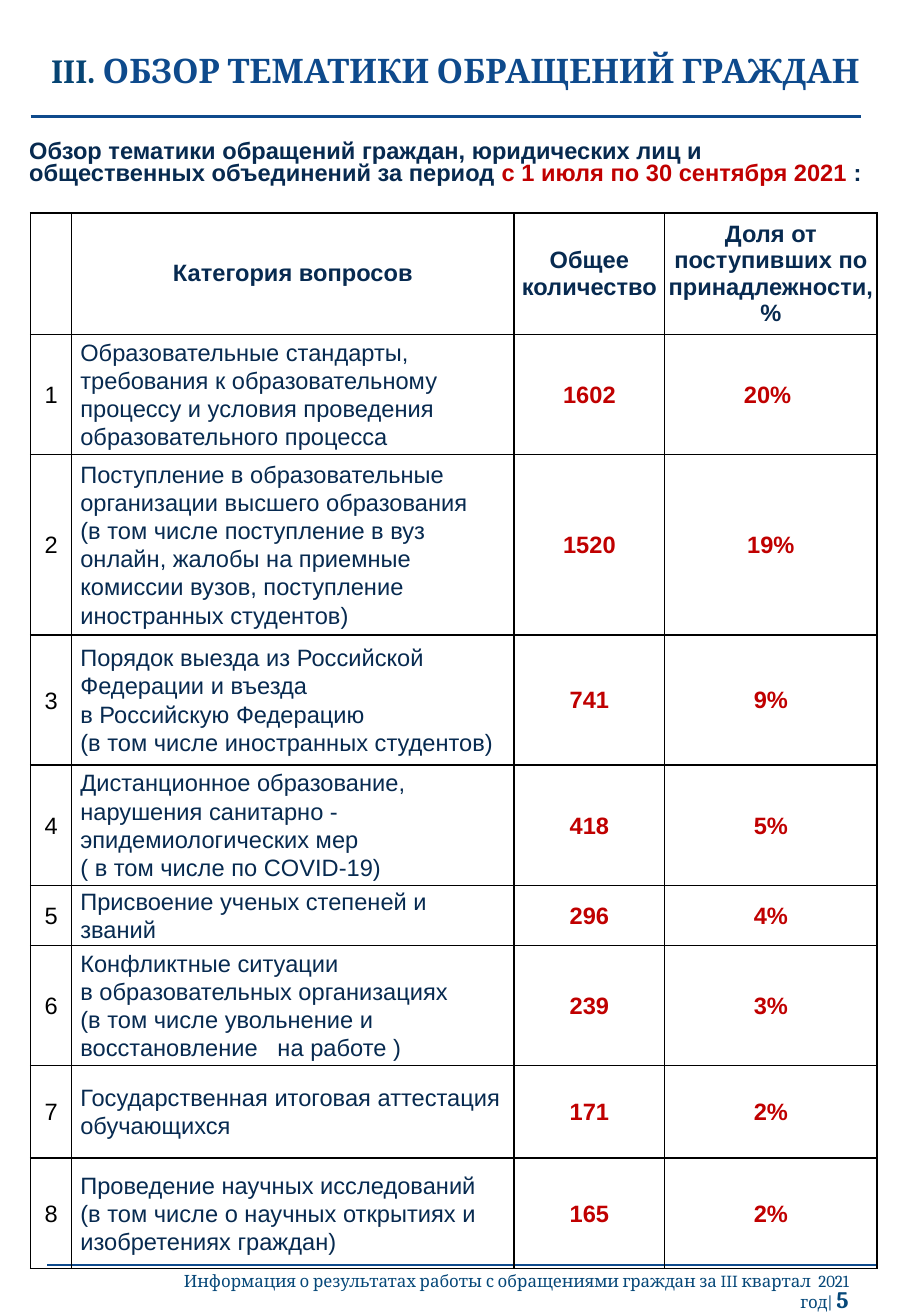
from lxml.etree import SubElement
from pptx import Presentation
from pptx.dml.color import RGBColor
from pptx.enum.shapes import MSO_CONNECTOR as Connector
from pptx.enum.text import MSO_ANCHOR as Anchor, PP_ALIGN as Align
from pptx.oxml.ns import qn
from pptx.util import Cm, Pt

COLORS = {
    "title_number": "064473",
    "title": "0E4A8C",
    "footer": "064879",
    "navy": "072A50",
    "red": "C00000",
    "black": "000000",
}

TITLE = [
    ("III. ", "Cambria", 20, "title_number", True),
    ("ОБЗОР ТЕМАТИКИ ОБРАЩЕНИЙ ГРАЖДАН", "Cambria", 20, "title", True),
]
SUBTITLE = [
    ("Обзор тематики обращений граждан, юридических лиц и общественных объединений за период ",
     "Arial", 14, "navy", True),
    ("с 1 июля по 30 сентября 2021 ", "Arial", 14, "red", True),
    (":", "Arial", 14, "navy", True),
]
FOOTER = [
    ("Информация о результатах работы с обращениями граждан за III квартал  2021 год| ",
     "Cambria", 10, "footer", False),
    ("5", "Cambria", 14, "footer", True),
]
HEADINGS = ["", "Категория вопросов", "Общее количество", "Доля от поступивших по принадлежности, %"]
TOPICS = [
    (["Образовательные стандарты, требования к образовательному процессу "
      "и условия проведения образовательного процесса"], "1602", "20% "),
    (["Поступление в образовательные организации высшего образования",
      "(в том числе поступление в вуз онлайн, жалобы на приемные комиссии вузов, "
      "поступление иностранных студентов)"], "1520", "19%"),
    (["Порядок выезда из Российской Федерации и въезда \nв Российскую Федерацию",
      "(в том числе иностранных студентов)"], "741", "9%"),
    (["Дистанционное образование, нарушения санитарно - эпидемиологических мер \n"
      "( в том числе по COVID-19)"], "418", "5%"),
    (["Присвоение ученых степеней и званий"], "296", "4%"),
    (["Конфликтные ситуации \nв образовательных организациях",
      "(в том числе увольнение и восстановление   на работе )"], "239", "3%"),
    (["Государственная итоговая аттестация обучающихся"], "171", "2%"),
    (["Проведение научных исследований\n"
      "(в том числе о научных открытиях и изобретениях граждан)"], "165", "2%"),
]
COLUMN_WIDTHS = [0.86, 9.25, 3.15, 4.44]
ROW_HEIGHTS = [2.54, 2.5, 3.76, 2.72, 2.5, 1.24, 2.5, 1.93, 2.31]
RULE_LENGTH = 17.37
RULES = [(0.64, 2.44), (0.99, 26.44)]


def style_run(run, font_name, size, color, bold):
    run.font.name = font_name
    run.font.size = Pt(size)
    run.font.bold = bold
    run.font.color.rgb = RGBColor.from_string(COLORS[color])


def add_caption(slide, box, parts, align, spacing, anchor=Anchor.TOP):
    frame = slide.shapes.add_textbox(*map(Cm, box)).text_frame
    frame.word_wrap = True
    frame.vertical_anchor = anchor
    line = frame.paragraphs[0]
    line.alignment = align
    line.line_spacing = spacing
    for text, *style in parts:
        run = line.add_run()
        run.text = text
        style_run(run, *style)


def add_rule(slide, left, top):
    rule = slide.shapes.add_connector(
        Connector.STRAIGHT, Cm(left), Cm(top), Cm(left + RULE_LENGTH), Cm(top))
    rule.line.color.rgb = RGBColor.from_string(COLORS["title"])
    rule.line.width = Pt(1.5)
    SubElement(rule._element.spPr, qn("a:effectLst"))


def add_borders(cell):
    properties = cell._tc.get_or_add_tcPr()
    for side in ("a:lnL", "a:lnR", "a:lnT", "a:lnB"):
        border = SubElement(properties, qn(side), w=str(Pt(1)))
        fill = SubElement(border, qn("a:solidFill"))
        SubElement(fill, qn("a:srgbClr"), val=COLORS["black"])


def fill_cell(cell, paragraphs, color, bold, align, spacing, margin):
    add_borders(cell)
    cell.fill.background()
    cell.vertical_anchor = Anchor.MIDDLE
    cell.margin_left = cell.margin_right = Cm(margin)
    cell.margin_top = cell.margin_bottom = 0
    frame = cell.text_frame
    for index, text in enumerate(paragraphs):
        paragraph = frame.add_paragraph() if index else frame.paragraphs[0]
        paragraph.text = text
        paragraph.alignment = align
        paragraph.line_spacing = spacing
        for run in paragraph.runs:
            style_run(run, "Arial", 14, color, bold)


def add_topics(slide):
    table = slide.shapes.add_table(
        len(ROW_HEIGHTS), len(COLUMN_WIDTHS), Cm(0.64), Cm(4.45),
        Cm(sum(COLUMN_WIDTHS)), Cm(sum(ROW_HEIGHTS))).table
    table.horz_banding = False
    for column, width in zip(table.columns, COLUMN_WIDTHS):
        column.width = Cm(width)
    for row, height in zip(table.rows, ROW_HEIGHTS):
        row.height = Cm(height)
    for cell, heading in zip(table.rows[0].cells, HEADINGS):
        fill_cell(cell, [heading], "navy", True, Align.CENTER, 1.0, 0.08)
    for number, (category, total, share) in enumerate(TOPICS, 1):
        columns = [
            ([str(number)], "black", False, Align.CENTER, 1.07),
            (category, "navy", False, Align.LEFT, 1.06),
            ([total], "red", True, Align.CENTER, 1.06),
            ([share], "red", True, Align.CENTER, 1.06),
        ]
        for cell, content in zip(table.rows[number].cells, columns):
            fill_cell(cell, *content, 0.18)


def main():
    presentation = Presentation()
    presentation.slide_width = Cm(19.05)
    presentation.slide_height = Cm(27.51)
    slide = presentation.slides.add_slide(presentation.slide_layouts[6])
    add_caption(slide, (0, 0.91, 19.05, 1.22), TITLE, Align.CENTER, 0.9, Anchor.MIDDLE)
    for left, top in RULES:
        add_rule(slide, left, top)
    add_caption(slide, (3.45, 26.52, 14.55, 0.74), FOOTER, Align.RIGHT, 0.8)
    add_caption(slide, (0.36, 2.82, 18.36, 1.22), SUBTITLE, Align.LEFT, 0.8)
    add_topics(slide)
    presentation.save("out.pptx")


if __name__ == "__main__":
    main()
